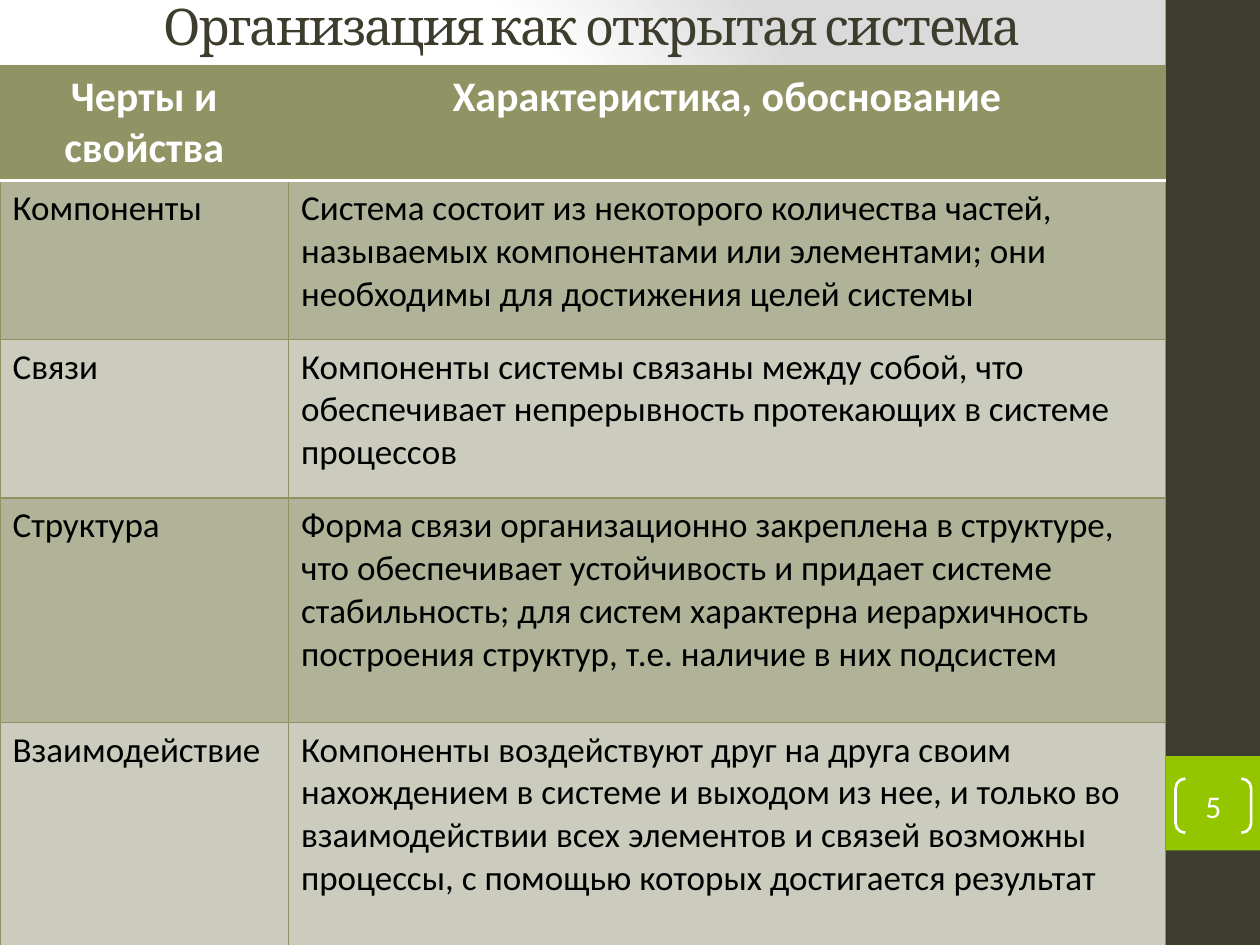
from lxml import etree
from pptx import Presentation
from pptx.dml.color import RGBColor
from pptx.enum.shapes import MSO_SHAPE as Shape
from pptx.enum.text import MSO_ANCHOR as Anchor, PP_ALIGN as Align
from pptx.oxml import parse_xml
from pptx.oxml.ns import nsdecls, qn
from pptx.util import Inches, Pt

COLORS = {
    "dark": "3E3D2D", "green": "94C600", "white": "FFFFFF", "black": "000000",
    "haze": "DADADA", "header": "909465", "band": "B1B398", "plain": "CBCCBE",
    "border": "8E9262",
}
ROWS = [
    ("Черты и свойства", "Характеристика, обоснование"),
    ("Компоненты", "Система состоит из некоторого количества частей, называемых "
     "компонентами или элементами; они необходимы для достижения целей системы"),
    ("Связи", "Компоненты системы связаны между собой, что обеспечивает "
     "непрерывность протекающих в системе процессов"),
    ("Структура", "Форма связи организационно закреплена в структуре, что "
     "обеспечивает устойчивость и придает системе стабильность; для систем "
     "характерна иерархичность построения структур, т.е. наличие в них подсистем"),
    ("Взаимодействие", "Компоненты воздействуют друг на друга своим нахождением в "
     "системе и выходом из нее, и только во взаимодействии всех элементов и связей "
     "возможны процессы, с помощью которых достигается результат"),
]
COL_WIDTHS = [2.29, 6.96]
ROW_HEIGHTS = [0.9, 1.26, 1.26, 1.78, 1.78]


def rgb(name):
    return RGBColor.from_string(COLORS[name])


def write(frame, text, size, font, color, align=Align.LEFT, bold=False):
    frame.text = text
    paragraph = frame.paragraphs[0]
    paragraph.alignment = align
    run = paragraph.runs[0]
    run.font.size, run.font.name, run.font.bold = Pt(size), font, bold
    run.font.color.rgb = rgb(color)
    return run


prs = Presentation()
prs.slide_width, prs.slide_height = Inches(10), Inches(7.5)
slide = prs.slides.add_slide(prs.slide_layouts[5])
content_width = sum(COL_WIDTHS)
side_width = 10 - content_width

# Background: white fading to grey at the right
background = slide.background.fill
background.gradient()
stops = "".join(
    f'<a:gs pos="{share * 1000}"><a:srgbClr val="{COLORS[name]}"/></a:gs>'
    for share, name in [(0, "white"), (75, "white"), (100, "haze")])
gradient = slide.background._cSld.find(".//" + qn("a:gradFill"))
gradient.getparent().replace(gradient, parse_xml(
    f'<a:gradFill {nsdecls("a")} rotWithShape="1"><a:gsLst>{stops}</a:gsLst>'
    '<a:path path="circle"><a:fillToRect l="20000" t="50000" r="100000" b="50000"/>'
    '</a:path></a:gradFill>'))

# Side strip and page number tile
for top, height, color in [(0, 7.5, "dark"), (6, side_width, "green")]:
    strip = slide.shapes.add_shape(Shape.RECTANGLE, Inches(content_width), Inches(top),
                                   Inches(side_width), Inches(height))
    strip.shadow.inherit = False
    strip.fill.solid()
    strip.fill.fore_color.rgb = rgb(color)
    strip.line.fill.background()

# Title
title = slide.shapes.title
title.left, title.top, title.width, title.height = map(Inches, (0.2, 0, 9, 0.4))
title_run = write(title.text_frame, "Организация как открытая система",
                  28.8, "Cambria", "dark", Align.CENTER)
title_run.font._element.set("spc", "-100")
title.text_frame.vertical_anchor = Anchor.MIDDLE

# Table of traits
traits = slide.shapes.add_table(len(ROWS), len(COL_WIDTHS), 0, Inches(0.52),
                                Inches(content_width), Inches(sum(ROW_HEIGHTS))).table
for column, width in zip(traits.columns, COL_WIDTHS):
    column.width = Inches(width)
for row, height in zip(traits.rows, ROW_HEIGHTS):
    row.height = Inches(height)

for r, texts in enumerate(ROWS):
    for c, text in enumerate(texts):
        cell = traits.cell(r, c)
        if r == 0:
            fill = "header"
            write(cell.text_frame, text, 24, "Calibri", "white", Align.CENTER, True)
        else:
            fill = "band" if r % 2 else "plain"
            write(cell.text_frame, text, 20, "Calibri", "black")
        cell.fill.solid()
        cell.fill.fore_color.rgb = rgb(fill)
        # Thin borders, with a thicker white rule under the header
        properties = cell._tc.get_or_add_tcPr()
        for i, side in enumerate("LRTB"):
            under_header = (r, side) in [(0, "B"), (1, "T")]
            color, width = ("white", 2) if under_header else ("border", 1)
            properties.insert(i, parse_xml(
                f'<a:ln{side} {nsdecls("a")} w="{Pt(width)}"><a:solidFill>'
                f'<a:srgbClr val="{COLORS[color]}"/></a:solidFill></a:ln{side}>'))

# Page number in brackets
page = slide.shapes.add_shape(Shape.DOUBLE_BRACKET, Inches(9.33), Inches(6.18),
                              Inches(0.6), Inches(0.43))
page.adjustments[0] = 0.18
page.shadow.inherit = False
page.fill.background()
page.line.color.rgb = rgb("white")
page.line.width = Pt(1.5)
number = page.text_frame
number.margin_left = number.margin_right = number.margin_top = number.margin_bottom = 0
number.vertical_anchor = Anchor.MIDDLE
write(number, "5", 18, "Calibri", "white", Align.CENTER)

prs.save("out.pptx")
